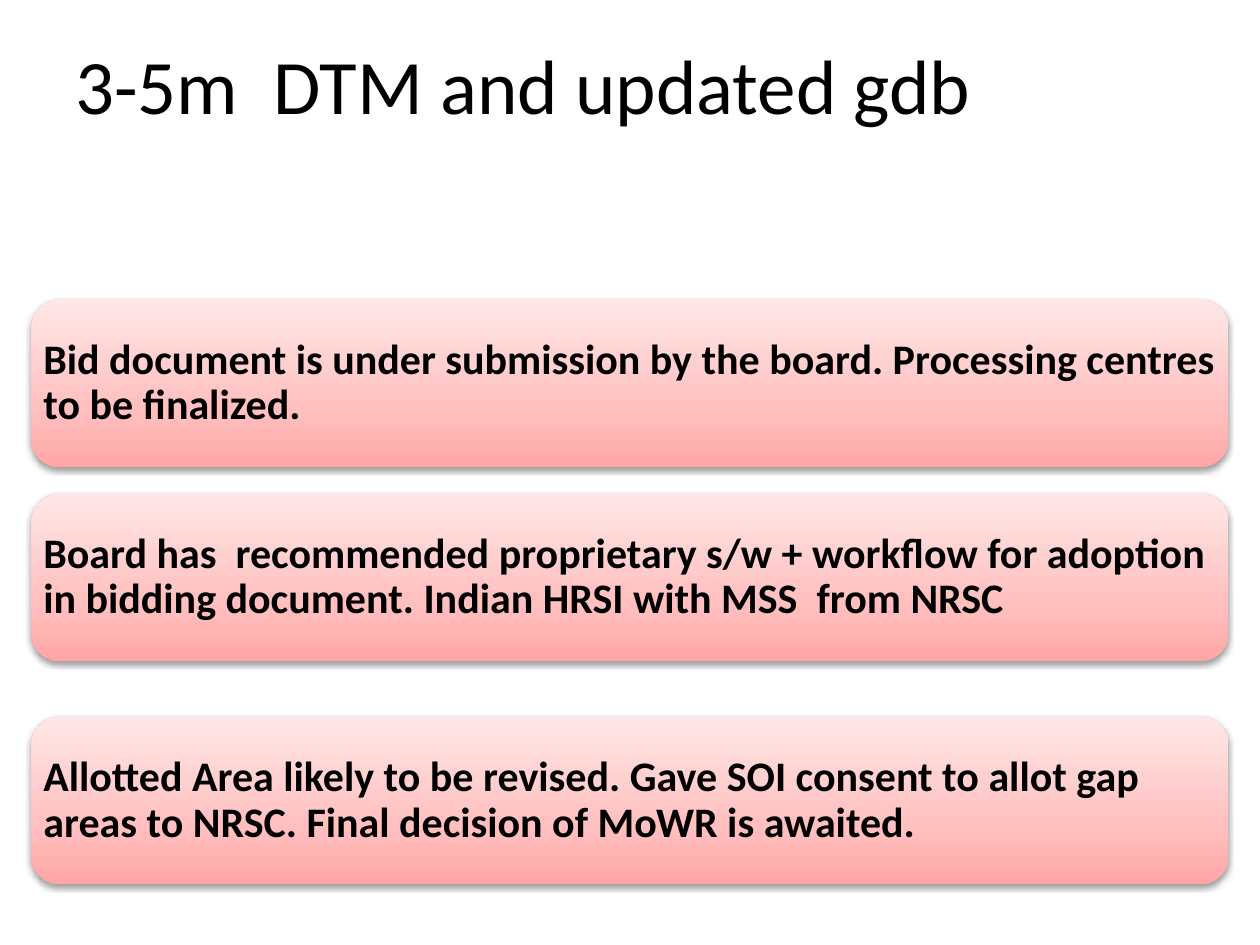
from copy import deepcopy

from lxml import etree
from pptx import Presentation
from pptx import util as u
from pptx.dml.color import RGBColor
from pptx.enum import shapes, text
from pptx.oxml.ns import qn

PX = 9144
COLORS = {"ink": "000000", "deep": "FFA6A5", "mid": "FFC0BF", "pale": "FFE7E7"}
GRADIENT = [(0, "deep"), (0.35, "mid"), (1, "pale")]
CARD_X, CARD_W, CARD_H = 25, 950, 133
CARDS = [
    (238, "Bid document is under submission by the board. Processing centres to be finalized."),
    (392, "Board has  recommended proprietary s/w + workflow for adoption in bidding document. "
          "Indian HRSI with MSS  from NRSC"),
    (569, "Allotted Area likely to be revised. Gave SOI consent to allot gap areas to NRSC. "
          "Final decision of MoWR is awaited."),
]


def px(*values):
    return [u.Emu(v * PX) for v in values]


class Deck:
    font = "Calibri"

    def __init__(self, prs):
        self.s = prs.slides.add_slide(prs.slide_layouts[6])

    def color(self, name):
        return RGBColor.from_string(COLORS[name])

    def run(self, p, words, size, bold=False):
        r = p.add_run()
        r.text = words
        r.font.name = self.font
        r.font.size = u.Pt(size)
        r.font.bold = bold
        r.font.color.rgb = self.color("ink")

    def title(self, x, y, w, h, words):
        tf = self.s.shapes.add_textbox(*px(x, y, w, h)).text_frame
        tf.word_wrap = True
        tf.auto_size = text.MSO_AUTO_SIZE.SHAPE_TO_FIT_TEXT
        self.run(tf.paragraphs[0], words, 44)

    def gradient(self, sp):
        sp.fill.gradient()
        sp.fill.gradient_angle = 90
        stops = sp._element.spPr.find(qn("a:gradFill")).find(qn("a:gsLst"))
        stops.append(deepcopy(stops[-1]))
        for stop, (position, name) in zip(sp.fill.gradient_stops, GRADIENT):
            stop.position = position
            stop.color.rgb = self.color(name)

    def shadow(self, sp):
        sp.shadow.inherit = False
        effects = sp._element.spPr.find(qn("a:effectLst"))
        outer = etree.SubElement(effects, qn("a:outerShdw"), blurRad="40000",
                                 dist="20000", dir="5400000", rotWithShape="0")
        tone = etree.SubElement(outer, qn("a:srgbClr"), val=COLORS["ink"])
        etree.SubElement(tone, qn("a:alpha"), val="38000")

    def card(self, x, y, w, h, words):
        sp = self.s.shapes.add_shape(shapes.MSO_SHAPE.ROUNDED_RECTANGLE, *px(x, y, w, h))
        self.gradient(sp)
        sp.line.fill.background()
        self.shadow(sp)
        tf = sp.text_frame
        tf.word_wrap = True
        tf.vertical_anchor = text.MSO_ANCHOR.MIDDLE
        tf.margin_left, tf.margin_top, tf.margin_right, tf.margin_bottom = px(3, 3, 3, 3)
        p = tf.paragraphs[0]
        p.alignment = text.PP_ALIGN.LEFT
        p.line_spacing = 0.9
        self.run(p, words, 24, bold=True)


def main():
    prs = Presentation()
    prs.slide_width, prs.slide_height = px(1000, 750)
    deck = Deck(prs)
    for top, words in CARDS:
        deck.card(CARD_X, top, CARD_W, CARD_H, words)
    deck.title(50, 25, 925, 84, "3-5m  DTM and updated gdb")
    prs.save("out.pptx")


if __name__ == "__main__":
    main()
